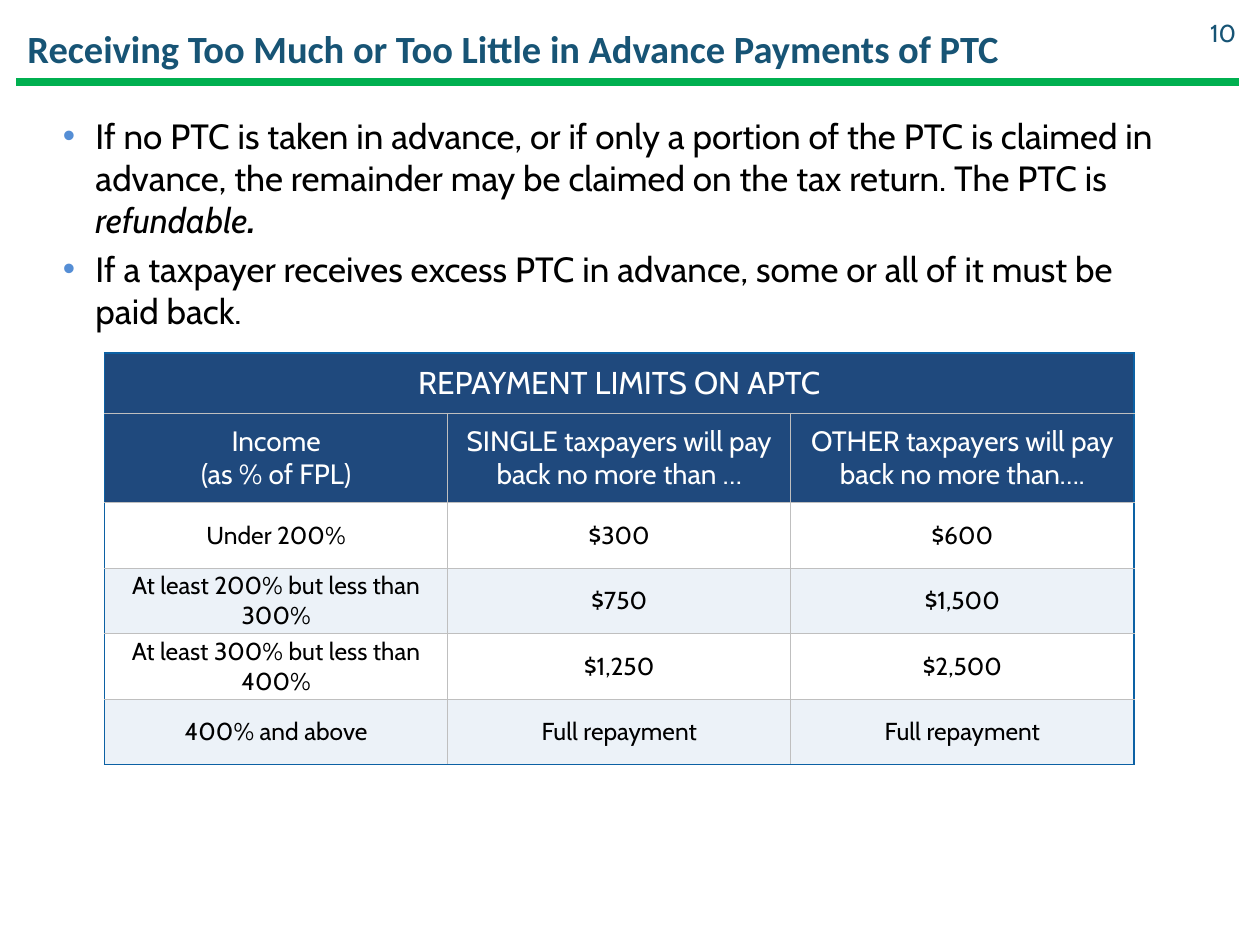
from lxml import etree
from pptx import Presentation
from pptx import util as u
from pptx.dml.color import RGBColor
from pptx.enum import shapes, text
from pptx.oxml import ns

TEAL = RGBColor(0x17, 0x54, 0x75)
GREEN = RGBColor(0x00, 0xB0, 0x50)
BULLET = RGBColor(0x55, 0x8E, 0xD5)
NAVY = RGBColor(0x1F, 0x49, 0x7D)
PALE = RGBColor(0xEC, 0xF2, 0xF8)
EDGE = RGBColor(0x0C, 0x61, 0xA4)
GRID = RGBColor(0xBF, 0xBF, 0xBF)
WHITE = RGBColor(0xFF, 0xFF, 0xFF)
BLACK = RGBColor(0x00, 0x00, 0x00)

prs = Presentation()
prs.slide_width, prs.slide_height = u.Inches(10), u.Inches(7.5)
s = prs.slides.add_slide(prs.slide_layouts[6])


def add_text(left, top, width, height, anchor):
    tf = s.shapes.add_textbox(*map(u.Inches, (left, top, width, height))).text_frame
    tf.word_wrap = True
    tf.vertical_anchor = anchor
    return tf


def set_font(p, size, color, name="Cabin", bold=False):
    p.font.size, p.font.name, p.font.bold = u.Pt(size), name, bold
    p.font.color.rgb = color


# Rule under the title
rule = s.shapes.add_connector(shapes.MSO_CONNECTOR.STRAIGHT, u.Inches(0.13),
                              u.Inches(0.65), u.Inches(9.83), u.Inches(0.65))
rule.line.color.rgb = GREEN
rule.line.width = u.Pt(4.75)
etree.SubElement(rule._element.spPr, ns.qn("a:effectLst"))

# Title
p = add_text(0.12, 0.1, 9.44, 0.57, text.MSO_ANCHOR.MIDDLE).paragraphs[0]
p.text = "Receiving Too Much or Too Little in Advance Payments of PTC"
set_font(p, 22, TEAL, "Calibri", True)

# Bulleted body
bullets = [
    [("If no PTC is taken in advance, or if only a portion of the PTC is claimed in "
      "advance, the remainder may be claimed on the tax return. The PTC is ", False, False),
     ("refundable", True, False), (".", True, True)],
    [("If a taxpayer receives excess PTC in advance, some or all of it must be "
      "paid back.", False, False)],
]
tf = add_text(0.4, 0.86, 9, 5.32, text.MSO_ANCHOR.TOP)
for i, runs in enumerate(bullets):
    p = tf.add_paragraph() if i else tf.paragraphs[0]
    set_font(p, 20, BLACK)
    p.space_before = u.Pt(4)
    for words, italic, bold in runs:
        r = p.add_run()
        r.text = words
        r.font.italic, r.font.bold = italic, bold
    pPr = p._p.get_or_add_pPr()
    pPr.set("marL", str(u.Inches(0.26)))
    pPr.set("indent", str(-u.Inches(0.26)))
    marks = [etree.Element(ns.qn(tag)) for tag in ("a:buClr", "a:buFont", "a:buChar")]
    etree.SubElement(marks[0], ns.qn("a:srgbClr"), val=str(BULLET))
    marks[1].set("typeface", "Arial")
    marks[2].set("char", "•")
    for mark in marks:
        pPr.insert_element_before(mark, "a:tabLst", "a:defRPr", "a:extLst")

# Slide number
p = add_text(9.4, 0.06, 0.51, 0.4, text.MSO_ANCHOR.MIDDLE).paragraphs[0]
p.text = "10"
p.alignment = text.PP_ALIGN.RIGHT
set_font(p, 14, TEAL)

# Repayment table
rows = [
    ("REPAYMENT LIMITS ON APTC", "", ""),
    ("Income\n(as % of FPL)", "SINGLE taxpayers will pay back no more than …",
     "OTHER taxpayers will pay back no more than…."),
    ("Under 200%", "$300", "$600"),
    ("At least 200% but less than 300%", "$750", "$1,500"),
    ("At least 300% but less than 400%", "$1,250", "$2,500"),
    ("400% and above", "Full repayment", "Full repayment"),
]
heights = [0.48, 0.71] + [0.52] * 4
sizes = [18, 16] + [14] * 4
fills = [NAVY, NAVY] + [WHITE, PALE] * 2
n_rows, n_cols = len(rows), len(rows[0])
tbl = s.shapes.add_table(n_rows, n_cols, u.Inches(0.83), u.Inches(2.8),
                         u.Inches(8.17), u.Inches(sum(heights))).table
tbl.first_row = tbl.horz_banding = False
tbl.cell(0, 0).merge(tbl.cell(0, n_cols - 1))

for i, row in enumerate(rows):
    tbl.rows[i].height = u.Inches(heights[i])
    for j, words in enumerate(row):
        cell = tbl.cell(i, j)
        if cell.is_spanned:
            continue
        cell.text = words
        cell.vertical_anchor = text.MSO_ANCHOR.MIDDLE
        cell.margin_left = cell.margin_right = u.Inches(0.03 if i else 0)
        cell.margin_top = cell.margin_bottom = u.Inches(0.01 if i else 0)
        for p in cell.text_frame.paragraphs:
            p.alignment = text.PP_ALIGN.CENTER
            set_font(p, sizes[i], WHITE if i < 2 else BLACK)
        # Blue outer frame, thin grey grid inside
        last_col = j + (cell.span_width if cell.is_merge_origin else 1) == n_cols
        outer = {"L": j == 0, "R": last_col, "T": i == 0, "B": i == n_rows - 1}
        for side, on_edge in outer.items():
            ln = etree.SubElement(cell._tc.get_or_add_tcPr(), ns.qn("a:ln" + side),
                                  w=str(u.Pt(1 if on_edge else 0.5)))
            solid = etree.SubElement(ln, ns.qn("a:solidFill"))
            etree.SubElement(solid, ns.qn("a:srgbClr"), val=str(EDGE if on_edge else GRID))
        cell.fill.solid()
        cell.fill.fore_color.rgb = fills[i]

prs.save("out.pptx")
